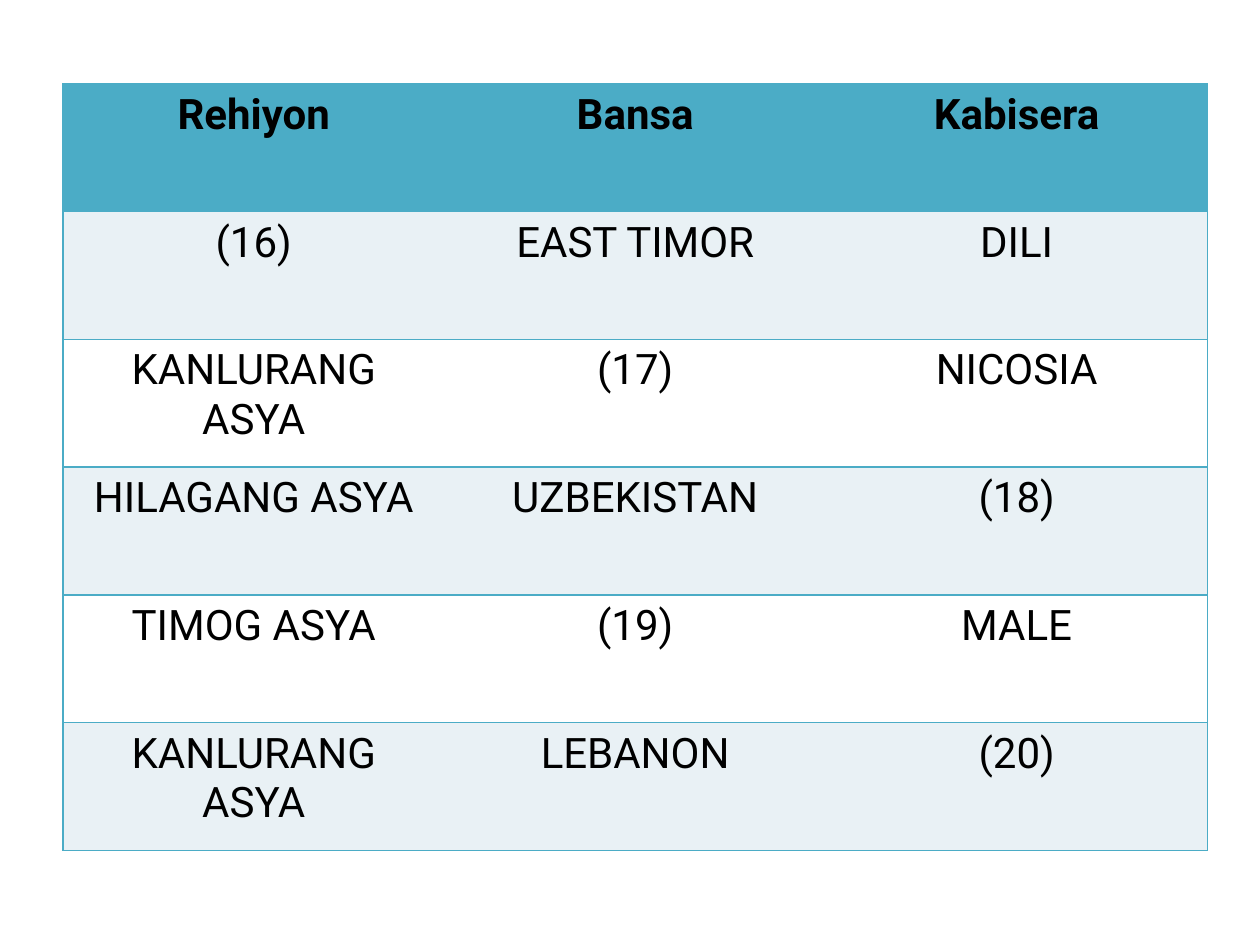
"""Build a slide with a table of Asian regions, countries and capitals."""
from dataclasses import dataclass

from lxml.etree import SubElement
from pptx import Presentation
from pptx.dml.color import RGBColor
from pptx.enum.text import PP_ALIGN
from pptx.oxml.ns import qn
from pptx.util import Pt

TEAL, PALE, WHITE, BLACK = "4BACC6", "E9F1F5", "FFFFFF", "000000"
COL_WIDTH, ROW_HEIGHT = 218, 73


@dataclass
class Row:
    region: str
    country: str
    capital: str
    fill: str
    bold: bool = False


ROWS = [
    Row("Rehiyon", "Bansa", "Kabisera", TEAL, True),
    Row("(16)", "EAST TIMOR", "DILI", PALE),
    Row("KANLURANG ASYA", "(17)", "NICOSIA", WHITE),
    Row("HILAGANG ASYA", "UZBEKISTAN", "(18)", PALE),
    Row("TIMOG ASYA", "(19)", "MALE", WHITE),
    Row("KANLURANG ASYA", "LEBANON", "(20)", PALE),
]


def rgb(color: str) -> RGBColor:
    return RGBColor.from_string(color)


def set_borders(cell, sides: str) -> None:
    tcPr = cell._tc.get_or_add_tcPr()
    for side in "LRTB":
        ln = SubElement(tcPr, qn(f"a:ln{side}"), w=str(Pt(1)))
        if side in sides:
            fill = SubElement(ln, qn("a:solidFill"))
            SubElement(fill, qn("a:srgbClr"), val=TEAL)
        else:
            SubElement(ln, qn("a:noFill"))


def draw_cell(cell, text: str, row: Row, sides: str) -> None:
    set_borders(cell, sides)
    cell.fill.solid()
    cell.fill.fore_color.rgb = rgb(row.fill)
    cell.text_frame.text = text
    p = cell.text_frame.paragraphs[0]
    p.alignment = PP_ALIGN.CENTER
    font = p.runs[0].font
    font.name, font.size, font.bold = "Roboto", Pt(24), row.bold
    font.color.rgb = rgb(BLACK)


def draw_table(s, rows: list[Row]) -> None:
    borders = ("LTB", "TB", "RTB")
    table = s.shapes.add_table(
        len(rows), len(borders), Pt(36), Pt(48),
        Pt(COL_WIDTH * len(borders)), Pt(ROW_HEIGHT * len(rows)),
    ).table
    for i, row in enumerate(rows):
        texts = (row.region, row.country, row.capital)
        for j, (text, sides) in enumerate(zip(texts, borders)):
            draw_cell(table.cell(i, j), text, row, sides)


def main() -> None:
    prs = Presentation()
    prs.slide_width, prs.slide_height = Pt(720), Pt(540)
    s = prs.slides.add_slide(prs.slide_layouts[6])
    draw_table(s, ROWS)
    prs.save("out.pptx")


if __name__ == "__main__":
    main()
